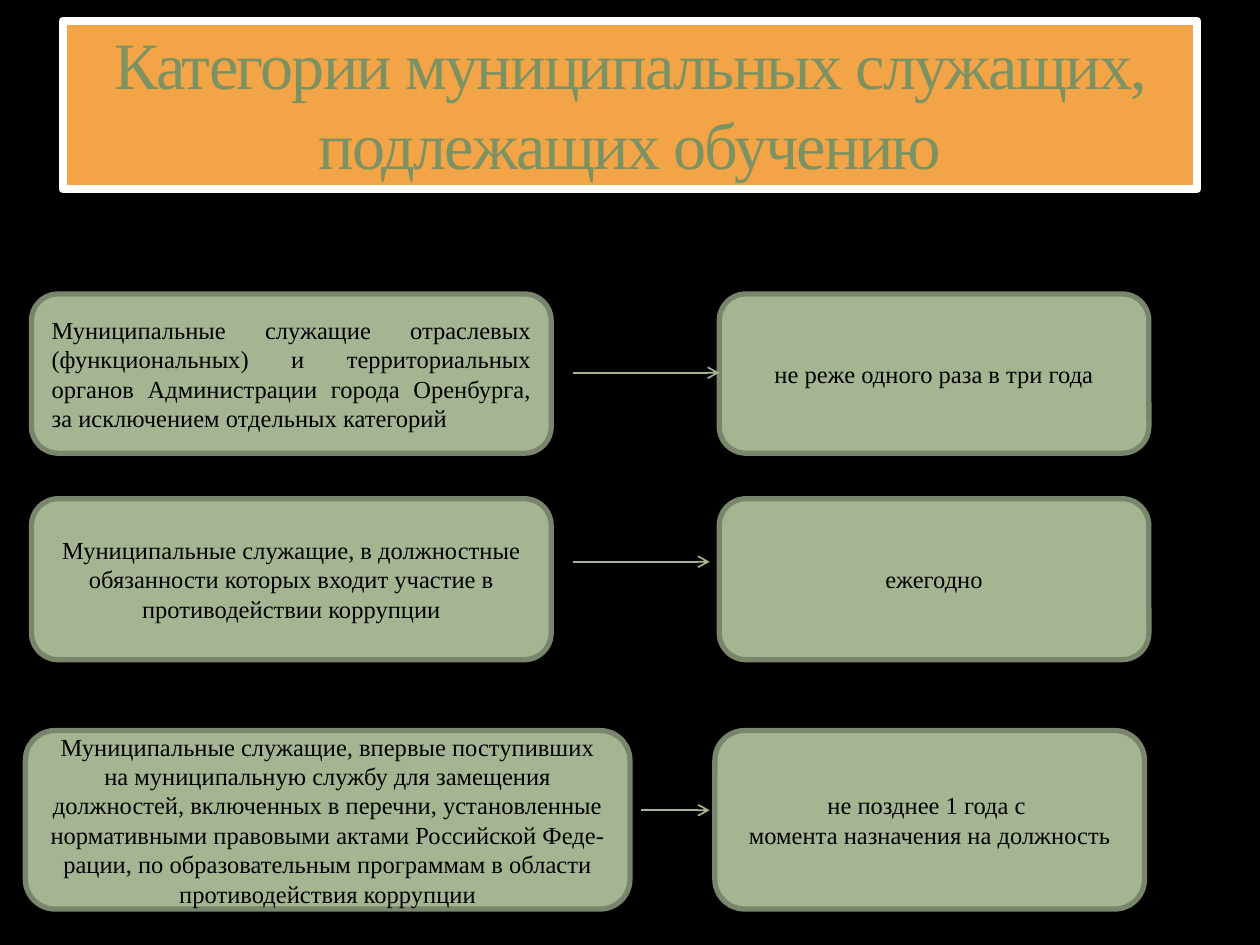
"""Build a slide on which groups of municipal staff must be trained and how often."""
from lxml.etree import SubElement
from pptx import Presentation
from pptx.dml.color import RGBColor
from pptx.enum.shapes import MSO_CONNECTOR, MSO_SHAPE
from pptx.enum.text import MSO_ANCHOR, MSO_AUTO_SIZE, PP_ALIGN
from pptx.oxml.ns import qn
from pptx.util import Pt

FONT = "Times New Roman"
HEX = {"back": "000000", "band": "F3A447", "frame": "FFFFFF", "head": "7D9263",
       "box": "A5B592", "edge": "7A866C", "text": "000000"}
TITLE = "Категории муниципальных служащих, подлежащих обучению"
GROUPS = [
    ("Муниципальные служащие отраслевых (функциональных) и территориальных органов "
     "Администрации города Оренбурга, за исключением отдельных категорий",
     PP_ALIGN.JUSTIFY),
    ("Муниципальные служащие, в должностные обязанности которых входит участие в "
     "противодействии коррупции", PP_ALIGN.CENTER),
    ("Муниципальные служащие, впервые поступивших на муниципальную службу для замещения "
     "должностей, включенных в перечни, установленные нормативными правовыми актами "
     "Российской Феде-рации, по образовательным программам в области противодействия "
     "коррупции", PP_ALIGN.CENTER),
]
TERMS = ["не реже одного раза в три года", "ежегодно",
         "не позднее 1 года с \nмомента назначения на должность"]
ROWS = [
    {"top": 168, "high": 91, "left": (18, 297), "right": 411, "line": (327.5, 411, 213)},
    {"top": 285, "high": 92, "left": (18, 297), "right": 411, "line": (327.5, 405.5, 321)},
    {"top": 417.5, "high": 102, "left": (14.5, 345.5), "right": 408.5,
     "line": (366.5, 405.5, 463)},
]
WIDE = 245.5


def tint(name):
    return RGBColor.from_string(HEX[name])


def paint(shape, fill, edge, width):
    shape.fill.solid()
    shape.fill.fore_color.rgb = tint(fill)
    shape.line.color.rgb = tint(edge)
    shape.line.width = Pt(width)


def write(shape, text, size, color, align, anchor):
    frame = shape.text_frame
    frame.text = text
    frame.word_wrap = True
    frame.auto_size = MSO_AUTO_SIZE.NONE
    frame.vertical_anchor = anchor
    for para in frame.paragraphs:
        para.alignment = align
        para.font.name = FONT
        para.font.size = Pt(size)
        para.font.color.rgb = tint(color)


def add_box(slide, left, top, wide, high, text, align):
    box = slide.shapes.add_shape(MSO_SHAPE.ROUNDED_RECTANGLE,
                                 Pt(left), Pt(top), Pt(wide), Pt(high))
    box.shadow.inherit = False
    paint(box, "box", "edge", 3)
    write(box, text, 14, "text", align, MSO_ANCHOR.MIDDLE)


def add_arrow(slide, start, end, y):
    arrow = slide.shapes.add_connector(MSO_CONNECTOR.STRAIGHT,
                                       Pt(start), Pt(y), Pt(end), Pt(y))
    arrow.line.color.rgb = tint("box")
    arrow.line.width = Pt(1)
    SubElement(arrow.line._get_or_add_ln(), qn("a:tailEnd"), type="arrow")
    SubElement(arrow._element.spPr, qn("a:effectLst"))


def add_title(slide):
    title = slide.shapes.title
    title.left, title.top, title.width, title.height = Pt(36), Pt(12), Pt(648), Pt(96)
    paint(title, "band", "frame", 5)
    write(title, TITLE, 37.8, "head", PP_ALIGN.CENTER, MSO_ANCHOR.BOTTOM)
    run = title.text_frame.paragraphs[0].runs[0]
    run.font._element.set("spc", "-100")


def main():
    deck = Presentation()
    deck.slide_width, deck.slide_height = Pt(720), Pt(540)
    slide = deck.slides.add_slide(deck.slide_layouts[5])
    slide.background.fill.solid()
    slide.background.fill.fore_color.rgb = tint("back")
    add_title(slide)
    for (group, align), term, row in zip(GROUPS, TERMS, ROWS):
        left, wide = row["left"]
        add_box(slide, left, row["top"], wide, row["high"], group, align)
        add_box(slide, row["right"], row["top"], WIDE, row["high"], term, PP_ALIGN.CENTER)
        add_arrow(slide, *row["line"])
    deck.save("out.pptx")


if __name__ == "__main__":
    main()
